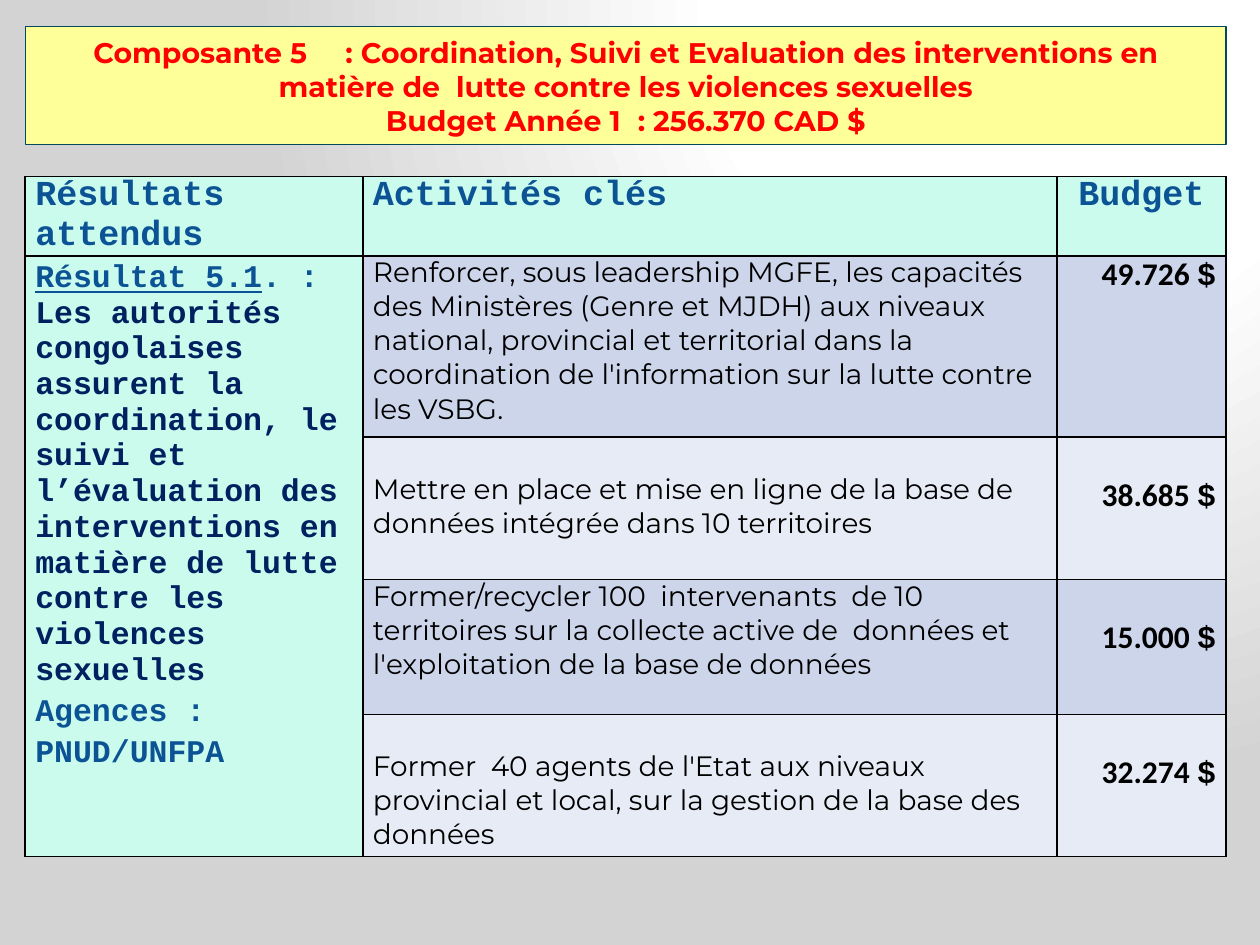
from pptx import Presentation
from pptx.dml.color import RGBColor as RGB
from pptx.enum.text import MSO_ANCHOR as Anchor, MSO_AUTO_SIZE as Auto, PP_ALIGN as Align
from pptx.oxml import parse_xml as to_xml
from pptx.oxml.ns import nsdecls
from pptx.util import Inches, Pt

MONO, SANS, BODY = "Courier New", "Montserrat", "Calibri"
BLUE, NAVY, BLACK, RED = "0B5394", "002060", "000000", "FF0000"
MINT, DARK, LIGHT = "CAFBED", "CCD5EA", "E7EBF5"

HEADS = [("Résultats attendus", Align.LEFT), ("Activités clés", Align.LEFT), ("Budget", Align.CENTER)]
COLS = [2.68, 5.51, 1.34]
ROWS = [0.5, 1.44, 1.13, 1.07, 1.13]
TASKS = [
    ("Renforcer, sous leadership MGFE, les capacités des Ministères (Genre et MJDH) aux niveaux "
     "national, provincial et territorial dans la coordination de l'information sur la lutte "
     "contre les VSBG.", "49.726", 0, 0),
    ("Mettre en place et mise en ligne de la base de données intégrée dans 10 territoires",
     "38.685", 0.28, 0.31),
    ("Former/recycler 100  intervenants  de 10 territoires sur la collecte active de  données et "
     "l'exploitation de la base de données", "15.000", 0, 0.31),
    ("Former  40 agents de l'Etat aux niveaux provincial et local, sur la gestion de la base des  "
     "données", "32.274", 0.28, 0.31),
]


def color(code):
    return RGB.from_string(code)


def write(para, text, size=18, face=MONO, ink=BLACK, bold=True, under=False, align=None, space=None):
    run = para.add_run()
    run.text = text
    font = run.font
    font.size, font.name, font.bold = Pt(size), face, bold
    font.underline = under
    font.color.rgb = color(ink)
    if align is not None:
        para.alignment = align
    if space:
        para.line_spacing = space


def paint(slide):
    stops = "".join(f'<a:gs pos="{pos}000"><a:srgbClr val="{code}"/></a:gs>'
                    for pos, code in [(0, "FFFFFF"), (40, "FFFFFF"), (100, "D3D3D3")])
    slide.element.cSld.insert(0, to_xml(
        f'<p:bg {nsdecls("p", "a")}><p:bgPr><a:gradFill><a:gsLst>{stops}</a:gsLst>'
        '<a:path path="circle"><a:fillToRect l="65000" b="98000"/></a:path>'
        '</a:gradFill><a:effectLst/></p:bgPr></p:bg>'))


def banner(slide, left, top, width, height):
    box = slide.shapes.title
    box.left, box.top, box.width, box.height = map(Inches, (left, top, width, height))
    box.fill.solid()
    box.fill.fore_color.rgb = color("FFFF99")
    box.line.color.rgb = color("03495C")
    box.line.width = Pt(0.75)
    frame = box.text_frame
    frame.auto_size, frame.word_wrap = Auto.NONE, True
    frame.vertical_anchor = Anchor.MIDDLE
    para = frame.paragraphs[0]
    look = dict(size=16.2, face=SANS, ink=RED, align=Align.CENTER)
    write(para, "Composante 5\t: Coordination, Suivi et Evaluation des interventions en matière de  "
                "lutte contre les violences sexuelles", **look)
    para.add_line_break()
    write(para, "Budget Année 1\t: 256.370 CAD $", **look)


def style(cell, fill, drop=0):
    cell.margin_left = cell.margin_right = Inches(0.08)
    cell.margin_top, cell.margin_bottom = Inches(drop), 0
    cell.fill.solid()
    cell.fill.fore_color.rgb = color(fill)
    props = cell._tc.get_or_add_tcPr()
    for spot, side in enumerate("LRTB"):
        props.insert(spot, to_xml(
            f'<a:ln{side} {nsdecls("a")} w="12700"><a:solidFill><a:srgbClr val="{BLACK}"/>'
            f'</a:solidFill></a:ln{side}>'))
    return cell.text_frame.paragraphs[0]


def result(cell):
    frame = cell.text_frame
    para = frame.paragraphs[0]
    write(para, "Résultat 5.1", ink=BLUE, under=True, space=1.15)
    write(para, ". :", ink=BLUE)
    write(frame.add_paragraph(), "Les autorités congolaises assurent la coordination, le suivi et "
          "l’évaluation des interventions en matière de lutte contre les violences sexuelles", ink=NAVY)
    write(frame.add_paragraph(), "Agences : PNUD/UNFPA", ink=BLUE, space=1.15)


def plan(slide, left, top):
    area = map(Inches, (left, top, sum(COLS), sum(ROWS)))
    grid = slide.shapes.add_table(len(ROWS), len(COLS), *area).table
    grid.first_row = grid.horz_banding = False
    for col, width in zip(grid.columns, COLS):
        col.width = Inches(width)
    for row, height in zip(grid.rows, ROWS):
        row.height = Inches(height)
    for num, (text, align) in enumerate(HEADS):
        write(style(grid.cell(0, num), MINT), text, size=20, ink=BLUE, align=align)
    for num, (text, cost, drop, sink) in enumerate(TASKS, 1):
        fill = DARK if num % 2 else LIGHT
        style(grid.cell(num, 0), MINT)
        write(style(grid.cell(num, 1), fill, drop), text, size=16, face=SANS, bold=False)
        para = style(grid.cell(num, 2), fill, sink)
        write(para, cost + " ", face=BODY, align=Align.RIGHT)
        write(para, "$")
    grid.cell(1, 0).merge(grid.cell(len(TASKS), 0))
    result(grid.cell(1, 0))


def main():
    deck = Presentation()
    deck.slide_width, deck.slide_height = Inches(10), Inches(7.5)
    slide = deck.slides.add_slide(deck.slide_layouts[5])
    paint(slide)
    banner(slide, 0.2, 0.21, 9.53, 0.94)
    plan(slide, 0.2, 1.4)
    deck.save("out.pptx")


if __name__ == "__main__":
    main()
